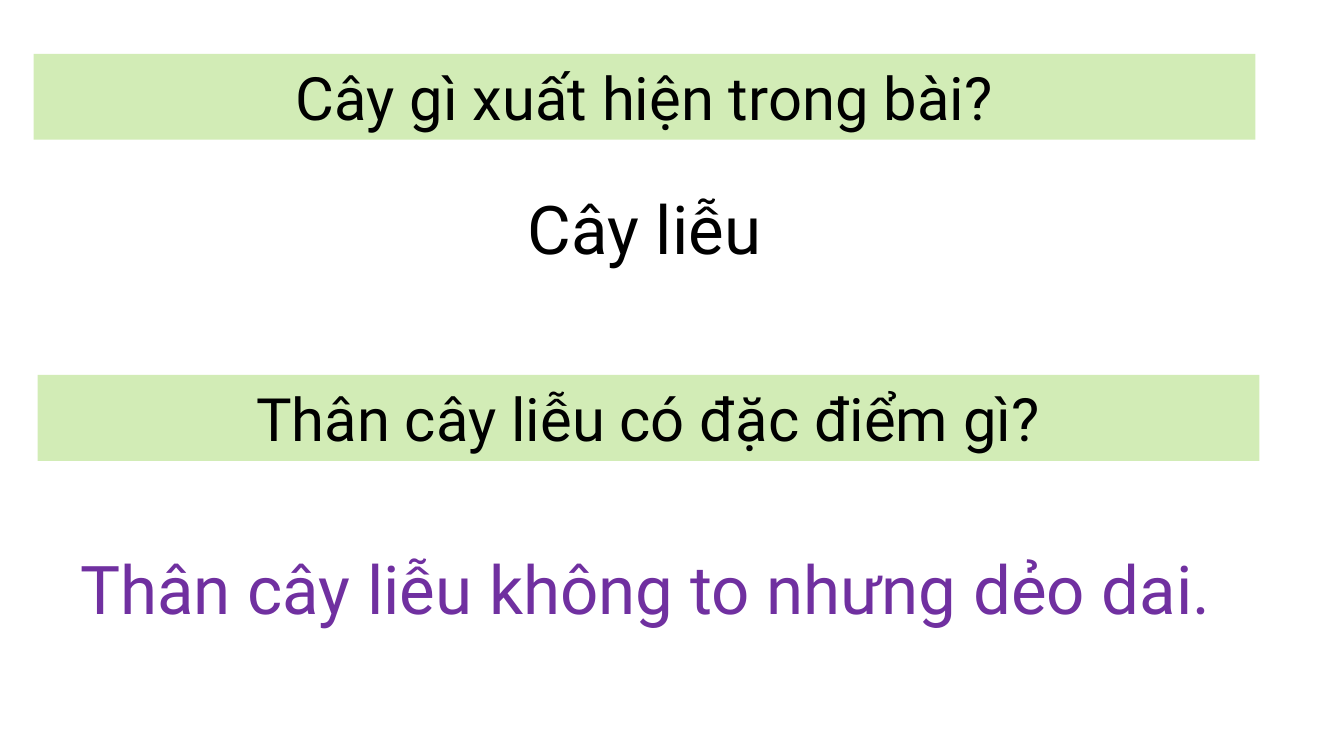
from pptx import Presentation
from pptx.dml.color import RGBColor
from pptx.enum import text
from pptx.util import Inches, Pt

GREEN = RGBColor(0xD2, 0xEC, 0xB6)
BLACK = RGBColor(0, 0, 0)
PURPLE = RGBColor(0x70, 0x30, 0xA0)


def write(shape, box, words, size, color, align, anchor):
    shape.left, shape.top, shape.width, shape.height = map(Inches, box)
    frame = shape.text_frame
    frame.word_wrap = True
    frame.auto_size = text.MSO_AUTO_SIZE.NONE
    frame.vertical_anchor = anchor
    frame.text = words
    line = frame.paragraphs[0]
    line.alignment = align
    line.line_spacing = 1.0
    line.font.name = "Roboto"
    line.font.size = Pt(size)
    line.font.color.rgb = color


def ask(shape, box, words):
    """Question on a green bar."""
    write(shape, box, words, 32, BLACK,
          text.PP_ALIGN.CENTER, text.MSO_ANCHOR.TOP)
    shape.fill.solid()
    shape.fill.fore_color.rgb = GREEN


def reply(shape, box, words, color, align):
    """Answer below its question."""
    write(shape, box, words, 36, color, align, text.MSO_ANCHOR.MIDDLE)


def main():
    deck = Presentation()
    # Widescreen, 16:9
    deck.slide_width, deck.slide_height = Inches(10), Inches(10 * 9 / 16)
    slide = deck.slides.add_slide(deck.slide_layouts[5])

    def new():
        return slide.shapes.add_textbox(0, 0, 0, 0)

    # First question and answer
    ask(slide.shapes.title, (0.25, 0.4, 9.09, 0.64),
        "Cây gì xuất hiện trong bài?")
    reply(new(), (1.32, 1.31, 6.95, 0.77), "Cây liễu",
          BLACK, text.PP_ALIGN.CENTER)

    # Second question and answer
    ask(new(), (0.28, 2.79, 9.09, 0.64), "Thân cây liễu có đặc điểm gì?")
    reply(new(), (0.5, 3.9, 9.25, 0.94),
          "Thân cây liễu không to nhưng dẻo dai.",
          PURPLE, text.PP_ALIGN.JUSTIFY)

    deck.save("out.pptx")


if __name__ == "__main__":
    main()
